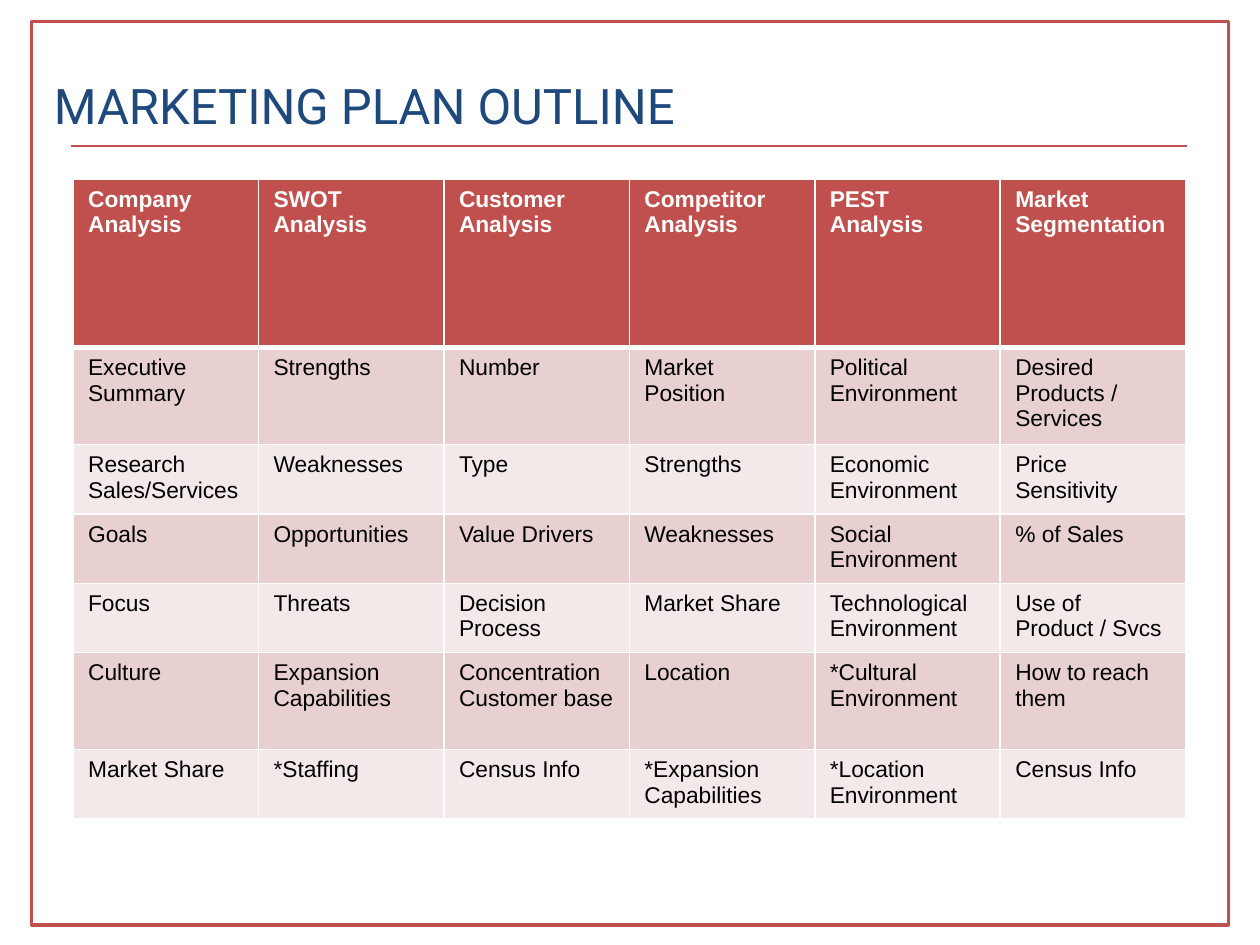
from lxml.etree import SubElement
from pptx import Presentation
from pptx.dml.color import RGBColor
from pptx.enum.shapes import MSO_CONNECTOR, MSO_SHAPE
from pptx.enum.text import MSO_ANCHOR
from pptx.oxml.ns import qn
from pptx.util import Inches, Pt

RED = RGBColor(0xC0, 0x50, 0x4D)
PINK = RGBColor(0xE8, 0xD0, 0xD0)
PALE_PINK = RGBColor(0xF4, 0xE9, 0xE9)
NAVY = RGBColor(0x1F, 0x49, 0x7D)
WHITE = RGBColor(0xFF, 0xFF, 0xFF)
BLACK = RGBColor(0, 0, 0)

TITLE = "MARKETING PLAN OUTLINE"
# A line break inside a cell starts a new paragraph.
ROWS = [
    ["Company Analysis", "SWOT\nAnalysis", "Customer Analysis",
     "Competitor Analysis", "PEST\nAnalysis", "Market Segmentation"],
    ["Executive Summary", "Strengths", "Number",
     "Market Position", "Political Environment", "Desired Products / Services"],
    ["Research Sales/Services", "Weaknesses", "Type",
     "Strengths", "Economic Environment", "Price Sensitivity"],
    ["Goals", "Opportunities", "Value Drivers",
     "Weaknesses", "Social Environment", "% of Sales"],
    ["Focus", "Threats", "Decision Process",
     "Market Share", "Technological\nEnvironment", "Use of\nProduct / Svcs"],
    ["Culture", "Expansion Capabilities", "Concentration\nCustomer base",
     "Location", "*Cultural Environment", "How to reach them"],
    ["Market Share", "*Staffing", "Census Info",
     "*Expansion Capabilities", "*Location Environment", "Census Info"],
]
HEADER, TALL, SHORT = 1.34, 0.77, 0.55
ROW_HEIGHTS = [HEADER, TALL, SHORT, SHORT, SHORT, TALL, SHORT]
TABLE_LEFT, TABLE_TOP, TABLE_WIDTH = 0.58, 1.42, 8.83


def add_borders(cell, widths):
    """Draw white borders; widths maps a side (L, R, T, B) to points."""
    properties = cell._tc.get_or_add_tcPr()
    for side, width in widths.items():
        line = SubElement(properties, qn(f"a:ln{side}"), w=str(Pt(width)))
        fill = SubElement(line, qn("a:solidFill"))
        SubElement(fill, qn("a:srgbClr"), val=str(WHITE))


def add_frame(page):
    rule = page.shapes.add_connector(
        MSO_CONNECTOR.STRAIGHT, Inches(0.56), Inches(1.16), Inches(9.42), Inches(1.16))
    rule.line.color.rgb = RED
    rule.line.width = Pt(1.5)
    SubElement(rule._element.spPr, qn("a:effectLst"))

    frame = page.shapes.add_shape(
        MSO_SHAPE.RECTANGLE, Inches(0.25), Inches(0.17), Inches(9.5), Inches(7.17))
    frame.shadow.inherit = False
    frame.fill.background()
    frame.line.color.rgb = RED
    frame.line.width = Pt(2)


def add_outline_table(page):
    table = page.shapes.add_table(
        len(ROWS), len(ROWS[0]), Inches(TABLE_LEFT), Inches(TABLE_TOP),
        Inches(TABLE_WIDTH), Inches(sum(ROW_HEIGHTS))).table
    for column in table.columns:
        column.width = Inches(TABLE_WIDTH / len(ROWS[0]))
    for r, (texts, height) in enumerate(zip(ROWS, ROW_HEIGHTS)):
        table.rows[r].height = Inches(height)
        is_header = r == 0
        top = 3 if r == 1 else 1
        bottom = 3 if is_header else 1
        for c, text in enumerate(texts):
            cell = table.cell(r, c)
            add_borders(cell, {"L": 1, "R": 1, "T": top, "B": bottom})
            cell.fill.solid()
            cell.fill.fore_color.rgb = RED if is_header else PINK if r % 2 else PALE_PINK
            cell.margin_left = cell.margin_right = Inches(0.12)
            cell.margin_top = cell.margin_bottom = Inches(0.06)
            cell.text = text
            for para in cell.text_frame.paragraphs:
                para.font.name = "Arial"
                para.font.size = Pt(13)
                para.font.bold = is_header
                para.font.color.rgb = WHITE if is_header else BLACK


def add_title(page):
    box = page.shapes.add_textbox(Inches(0.33), Inches(0.5), Inches(9.67), Inches(0.67))
    box.text_frame.word_wrap = True
    box.text_frame.vertical_anchor = MSO_ANCHOR.MIDDLE
    para = box.text_frame.paragraphs[0]
    para.text = TITLE
    para.font.name = "Roboto"
    para.font.size = Pt(28)
    para.font.color.rgb = NAVY


def main():
    deck = Presentation()
    deck.slide_width, deck.slide_height = Inches(10), Inches(7.5)
    page = deck.slides.add_slide(deck.slide_layouts[6])
    add_frame(page)
    add_outline_table(page)
    add_title(page)
    deck.save("out.pptx")


if __name__ == "__main__":
    main()
